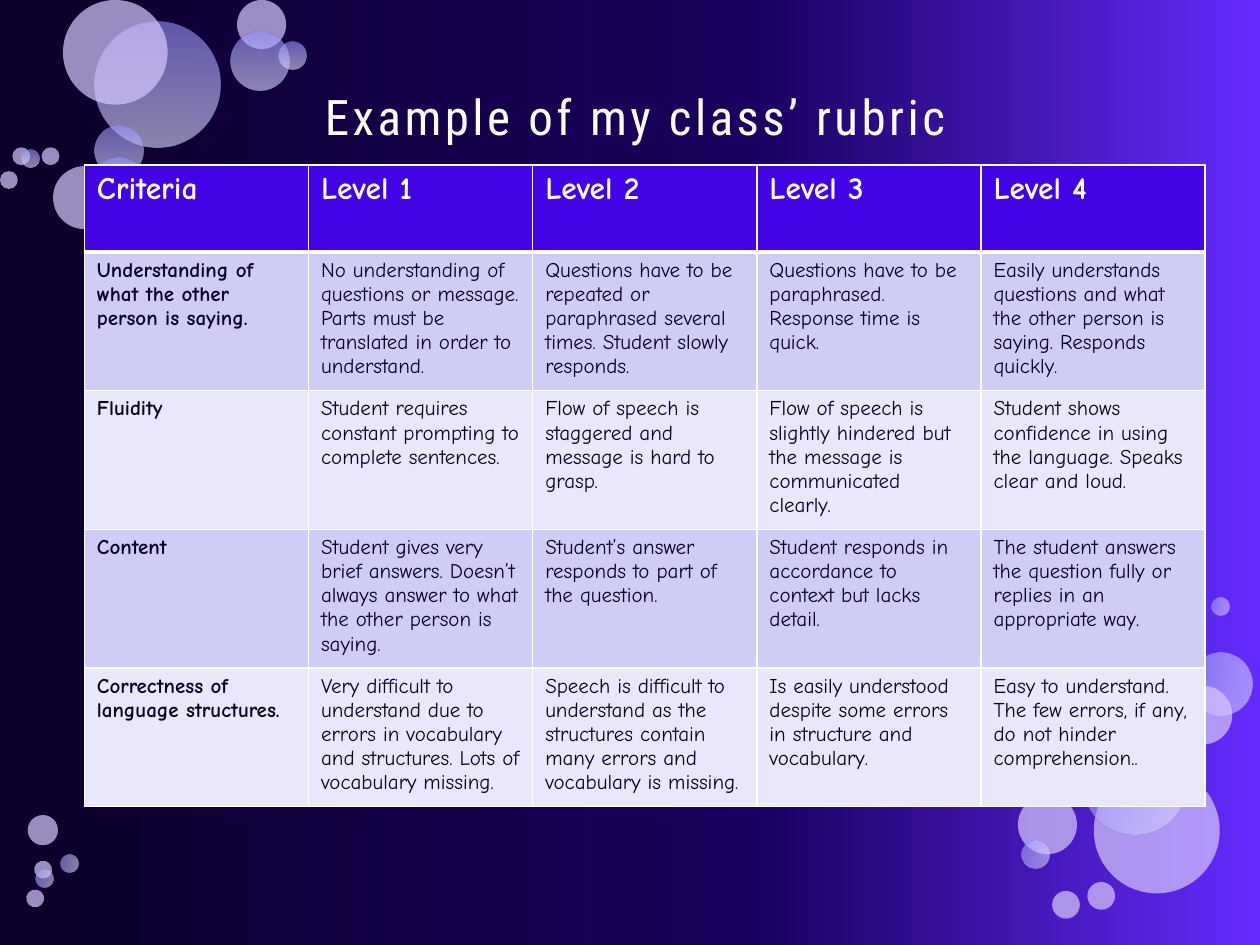
"""Build a slide with a speaking rubric table on a bubble background."""
import copy
from dataclasses import dataclass
from typing import Any

import pptx
import pptx.dml.color
import pptx.enum.shapes
import pptx.enum.text
import pptx.oxml
import pptx.oxml.ns
import pptx.util

Cm, Pt = pptx.util.Cm, pptx.util.Pt
BODY_FONT, TITLE_FONT = "Comic Neue", "Roboto Condensed"
WHITE, INK, HEADER_FILL = "FFFFFF", "0C002C", "4203E7"
BAND_FILLS = ("E9E7FA", "CFCCF6")
BACKDROP = ((0, "0B0029"), (0.6, "1A005F"), (1, "652BFF"))
GLOSS = ((0, "9890FF"), (0.5, "BFBBFF"), (1, "E0DEFF"))
MIST = "D7C8FE"


@dataclass(frozen=True)
class Bubble:
    left: float
    top: float
    size: float
    glossy: bool = False


UPPER_BUBBLES = (
    Bubble(1.9, 0.43, 2.54, True),
    Bubble(1.07, 3.35, 1.27),
    Bubble(1.9, 2.54, 0.99, True),
    Bubble(1.8, 3.18, 1.19, True),
    Bubble(1.27, 0, 2.11),
    Bubble(4.78, 0, 0.99),
    Bubble(4.65, 0.64, 1.19, True),
    Bubble(5.61, 0.84, 0.56, True),
    Bubble(0.25, 2.97, 0.36),
    Bubble(0, 3.45, 0.36),
    Bubble(0.43, 3.02, 0.36, True),
    Bubble(0.84, 2.97, 0.36),
)
LOWER_BUBBLES = (
    Bubble(22.05, 15.47, 2.54),
    Bubble(23.98, 13.16, 1.27, True),
    Bubble(23.65, 13.82, 1.19),
    Bubble(21.82, 14.71, 2.11, True),
    Bubble(0.56, 16.43, 0.61),
    Bubble(20.52, 16.03, 1.19),
    Bubble(20.6, 16.94, 0.56, True),
    Bubble(21.21, 17.96, 0.56),
    Bubble(21.92, 17.78, 0.56),
    Bubble(24.43, 12.04, 0.36, True),
    Bubble(0.69, 17.35, 0.36),
    Bubble(1.22, 17.22, 0.36, True),
    Bubble(0.71, 17.53, 0.36, True),
    Bubble(0.53, 17.93, 0.36),
)
RUBRIC = (
    ("Criteria", "Level 1", "Level 2", "Level 3", "Level 4"),
    (
        "Understanding of what the other person is saying.",
        "No understanding of questions or message. Parts must be translated in order to understand.",
        "Questions have to be repeated or paraphrased several times. Student slowly responds.",
        "Questions have to be paraphrased. Response time is quick.",
        "Easily understands questions and what the other person is saying. Responds quickly.",
    ),
    (
        "Fluidity",
        "Student requires constant prompting to complete sentences.",
        "Flow of speech is staggered and message is hard to grasp.",
        "Flow of speech is slightly hindered but the message is communicated clearly.",
        "Student shows confidence in using the language. Speaks clear and loud.",
    ),
    (
        "Content",
        "Student gives very brief answers. Doesn’t always answer to what the other person is saying.",
        "Student’s answer responds to part of the question.",
        "Student responds in accordance to context but lacks detail.",
        "The student answers the question fully or replies in an appropriate way.",
    ),
    (
        "Correctness of language structures.",
        "Very difficult to understand due to errors in vocabulary and structures. Lots of vocabulary missing.",
        "Speech is difficult to understand as the structures contain many errors and vocabulary is missing.",
        "Is easily understood despite some errors in structure and vocabulary.",
        "Easy to understand. The few errors, if any, do not hinder comprehension..",
    ),
)


def rgb(code: str) -> pptx.dml.color.RGBColor:
    return pptx.dml.color.RGBColor.from_string(code)


def fill_solid(fill: Any, code: str) -> None:
    fill.solid()
    fill.fore_color.rgb = rgb(code)


def fill_gradient(fill: Any, holder: Any, stops: tuple, angle: float) -> None:
    fill.gradient()
    fill.gradient_angle = angle
    stop_list = holder.xpath(".//a:gsLst")[0]
    stop_list.append(copy.deepcopy(stop_list[-1]))
    for stop, (position, code) in zip(fill.gradient_stops, stops):
        stop.position = position
        stop.color.rgb = rgb(code)


def set_opacity(holder: Any, percent: int) -> None:
    for tint in holder.xpath(".//a:srgbClr"):
        alpha = pptx.oxml.parse_xml(
            f'<a:alpha {pptx.oxml.ns.nsdecls("a")} val="{percent * 1000}"/>')
        tint.append(alpha)


def draw_bubble(slide: Any, bubble: Bubble, turned: bool) -> None:
    circle = slide.shapes.add_shape(
        pptx.enum.shapes.MSO_SHAPE.OVAL,
        Cm(bubble.left), Cm(bubble.top), Cm(bubble.size), Cm(bubble.size))
    circle.shadow.inherit = False
    circle.line.fill.background()
    properties = circle.element.spPr
    if bubble.glossy:
        fill_gradient(circle.fill, properties, GLOSS, 270)
    else:
        fill_solid(circle.fill, MIST)
    set_opacity(properties, 60 if bubble.glossy else 70)
    if turned:
        circle.rotation = 103.3
        properties.xfrm.set("flipV", "1")


def write(paragraph: Any, text: str, font: str, size: float, code: str, bold: bool = False) -> Any:
    run = paragraph.add_run()
    run.text = text
    run.font.name = font
    run.font.size = Pt(size)
    run.font.bold = bold
    run.font.color.rgb = rgb(code)
    return run


def draw_title(slide: Any, text: str) -> None:
    title = slide.shapes.add_textbox(Cm(6.3), Cm(0.74), Cm(18.42), Cm(3.18))
    frame = title.text_frame
    frame.word_wrap = True
    frame.vertical_anchor = pptx.enum.text.MSO_ANCHOR.MIDDLE
    heading = write(frame.paragraphs[0], text, TITLE_FONT, 28, WHITE)
    heading.font._element.set("spc", "200")


def set_borders(cell: Any, widths: dict[str, float]) -> None:
    for side, width in widths.items():
        cell._tc.get_or_add_tcPr().append(pptx.oxml.parse_xml(
            f'<a:ln{side} {pptx.oxml.ns.nsdecls("a")} w="{Pt(width)}">'
            f'<a:solidFill><a:srgbClr val="{rgb(WHITE)}"/></a:solidFill></a:ln{side}>'))


def draw_rubric(slide: Any) -> None:
    rubric = slide.shapes.add_table(
        len(RUBRIC), len(RUBRIC[0]), Cm(1.7), Cm(3.33), Cm(22.6), Cm(12.51)).table
    for column in rubric.columns:
        column.width = Cm(4.52)
    for r, texts in enumerate(RUBRIC):
        header = r == 0
        rubric.rows[r].height = Cm(1.75 if header else 2.69)
        for c, text in enumerate(texts):
            cell = rubric.cell(r, c)
            set_borders(cell, {"L": 1, "R": 1, "T": 3 if r == 1 else 1, "B": 3 if header else 1})
            fill_solid(cell.fill, HEADER_FILL if header else BAND_FILLS[r % 2])
            write(cell.text_frame.paragraphs[0], text, BODY_FONT, 18 if header else 12,
                  WHITE if header else INK, header or c == 0)


def main() -> None:
    deck = pptx.Presentation()
    deck.slide_width, deck.slide_height = Cm(25.4), Cm(19.05)
    slide = deck.slides.add_slide(deck.slide_layouts[6])
    fill_gradient(slide.background.fill, slide.element, BACKDROP, 0)
    for bubbles, turned in ((UPPER_BUBBLES, False), (LOWER_BUBBLES, True)):
        for bubble in bubbles:
            draw_bubble(slide, bubble, turned)
    draw_title(slide, "Example of my class’ rubric")
    draw_rubric(slide)
    deck.save("out.pptx")


if __name__ == "__main__":
    main()
